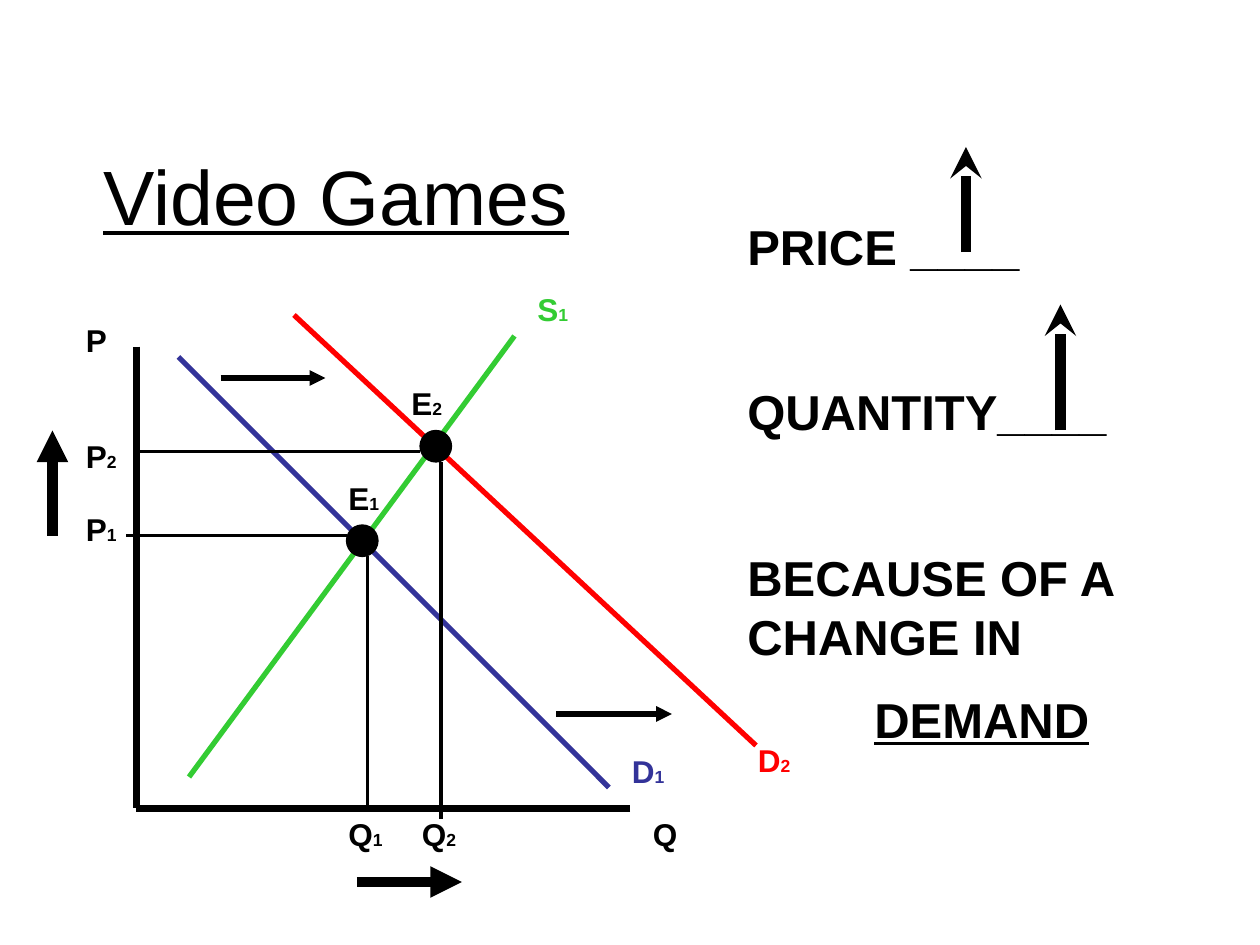
from pptx import Presentation
from pptx.dml.color import RGBColor
from pptx.enum.shapes import MSO_CONNECTOR as Connector, MSO_SHAPE as Shape
from pptx.enum.text import MSO_ANCHOR as Anchor, MSO_AUTO_SIZE as AutoSize, PP_ALIGN as Align
from pptx.oxml.ns import qn
from pptx.util import Inches, Pt
from lxml.etree import SubElement

THEME = {
    "font": "Arial",
    "black": RGBColor(0, 0, 0),
    "blue": RGBColor(0x33, 0x33, 0x99),
    "green": RGBColor(0x33, 0xCC, 0x33),
    "red": RGBColor(0xFF, 0, 0),
    "title": 44, "body": 28, "label": 18, "index": 10,
    "axis": 4.5, "curve": 3, "guide": 2.25, "arrow": 6, "outline": 0.75,
}

# Content: the graph sits on a grid of twelfths of an inch
CELL = 1 / 12
TITLE = ("Video Games", (5, 11, 54, 15))
# text, space before in points, alignment, underline
ANSWERS = [
    ("PRICE ____", 0, Align.LEFT, False),
    ("QUANTITY____", 61, Align.LEFT, False),
    ("BECAUSE OF A CHANGE IN", 61, Align.LEFT, False),
    ("DEMAND", 14, Align.CENTER, True),
]
ANSWER_BOX = (70, 20, 47, 54.5)
# start, end, colour, weight, arrowhead
LINES = [
    ((13, 33), (13, 77), "black", "axis", None),
    ((60, 77), (13, 77), "black", "axis", None),
    ((17, 34), (58, 75), "blue", "curve", None),
    ((18, 74), (49, 32), "green", "curve", None),
    ((28, 30), (72, 71), "red", "curve", None),
    ((12, 51), (33, 51), "black", "guide", None),
    ((35, 77), (35, 53), "black", "guide", None),
    ((13, 43), (40, 43), "black", "guide", None),
    ((42, 78), (42, 44), "black", "guide", None),
    ((21, 36), (31, 36), "black", "curve", "triangle"),
    ((53, 68), (64, 68), "black", "curve", "triangle"),
    ((5, 51), (5, 41), "black", "arrow", "triangle"),
    ((34, 84), (44, 84), "black", "arrow", "triangle"),
    ((92, 24), (92, 14), "black", "arrow", "stealth"),
    ((101, 41), (101, 29), "black", "arrow", "stealth"),
]
EQUILIBRIA = [(33, 50), (40, 41)]
DOT_SIZE = 3
# letter, index, left and top, colour
LABELS = [
    ("P", "", (7, 30), "black"), ("Q", "", (61, 77), "black"),
    ("P", "1", (7, 48), "black"), ("P", "2", (7, 41), "black"),
    ("Q", "1", (32, 77), "black"), ("Q", "2", (39, 77), "black"),
    ("E", "1", (32, 45), "black"), ("E", "2", (38, 36), "black"),
    ("D", "1", (59, 71), "blue"), ("D", "2", (71, 70), "red"),
    ("S", "1", (50, 27), "green"),
]
LABEL_SIZE = (7, 4.8)


def grid(*cells):
    return [Inches(cell * CELL) for cell in cells]


def add_span(para, text, size, color="black", **formats):
    span = para.add_run()
    span.text = text
    values = {"name": THEME["font"], "size": Pt(THEME[size]), **formats}
    for name, value in values.items():
        setattr(span.font, name, value)
    span.font.color.rgb = THEME[color]


def add_box(page, cells):
    frame = page.shapes.add_textbox(*grid(*cells)).text_frame
    frame.word_wrap = True
    return frame


def add_line(page, start, end, color, weight, head):
    line = page.shapes.add_connector(Connector.STRAIGHT, *grid(*start, *end))
    line.line.color.rgb = THEME[color]
    line.line.width = Pt(THEME[weight])
    if head:
        SubElement(line.line._get_or_add_ln(), qn("a:tailEnd"), type=head)
    SubElement(line._element.spPr, qn("a:effectLst"))


deck = Presentation()
deck.slide_width, deck.slide_height = Inches(10), Inches(7.5)
page = deck.slides.add_slide(deck.slide_layouts[5])

# Title
title_text, title_cells = TITLE
title = page.shapes.title
for side, length in zip(("left", "top", "width", "height"), grid(*title_cells)):
    setattr(title, side, length)
frame = title.text_frame
for name, value in {"word_wrap": True, "auto_size": AutoSize.NONE,
                    "vertical_anchor": Anchor.MIDDLE}.items():
    setattr(frame, name, value)
frame.paragraphs[0].alignment = Align.CENTER
add_span(frame.paragraphs[0], title_text, "title", underline=True)

# Axes, curves, guides and arrows
for line in LINES:
    add_line(page, *line)

# Equilibrium points
for left, top in EQUILIBRIA:
    dot = page.shapes.add_shape(Shape.OVAL, *grid(left, top, DOT_SIZE, DOT_SIZE))
    dot.shadow.inherit = False
    dot.fill.solid()
    dot.fill.fore_color.rgb = dot.line.color.rgb = THEME["black"]
    dot.line.width = Pt(THEME["outline"])

# Graph labels
for letter, index, corner, color in LABELS:
    para = add_box(page, (*corner, *LABEL_SIZE)).paragraphs[0]
    add_span(para, letter, "label", color, bold=True)
    if index:
        add_span(para, index, "index", color, bold=True)

# Answers
frame = add_box(page, ANSWER_BOX)
for number, (text, gap, align, underline) in enumerate(ANSWERS):
    para = frame.add_paragraph() if number else frame.paragraphs[0]
    para.space_before, para.alignment = Pt(gap), align
    add_span(para, text, "body", bold=True, underline=underline)

deck.save("out.pptx")
